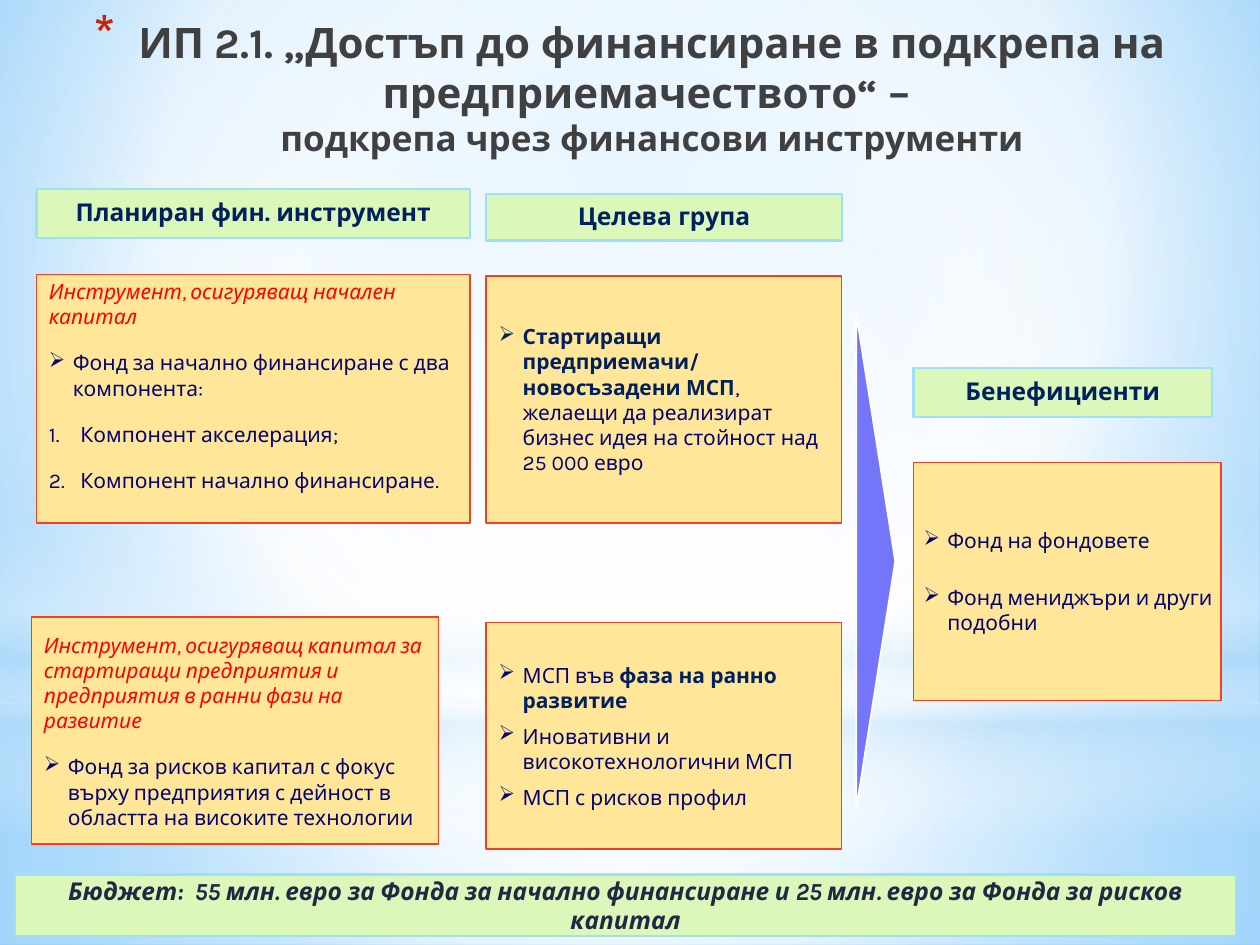
from lxml.etree import SubElement
from pptx import Presentation
from pptx.dml.color import RGBColor
from pptx.enum.shapes import MSO_SHAPE
from pptx.enum.text import MSO_ANCHOR, PP_ALIGN
from pptx.oxml.ns import qn
from pptx.util import Inches, Pt

C = {"white": "FFFFFF", "sky": "B4DCFA", "light": "9ED5FF", "deep": "5BB9FF",
     "green": "DCF7BA", "aqua": "9EE0F8", "sand": "FFE699", "orange": "F14124",
     "violet": "7575FA", "title": "404040", "star": "C3260C", "navy": "002060",
     "ink": "040470", "red": "FF0000", "dark": "212745"}
FONTS = {"title": dict(size=Pt(24), bold=True), "subtitle": dict(size=Pt(20), bold=True),
         "head": dict(size=Pt(14), bold=True), "lead": dict(size=Pt(12), italic=True),
         "body": dict(size=Pt(12)), "strong": dict(size=Pt(12), bold=True),
         "budget": dict(size=Pt(14), bold=True, italic=True)}
INK = {"title": "title", "subtitle": "title", "head": "navy", "lead": "red",
       "body": "ink", "strong": "navy", "budget": "dark"}

prs = Presentation()
prs.slide_width, prs.slide_height = Inches(10), Inches(7.5)
COL, ROW = prs.slide_width / 100, prs.slide_height / 75
s = prs.slides.add_slide(prs.slide_layouts[6])


def gradient(fill, root, stops, focus):
    fill.gradient()
    grad = next(root.iter(qn("a:gradFill")))
    grad.clear()
    grad.set("rotWithShape", "1")
    gs_list = SubElement(grad, qn("a:gsLst"))
    for pos, color, alpha in stops:
        gs = SubElement(gs_list, qn("a:gs"), pos=str(pos * 1000))
        clr = SubElement(gs, qn("a:srgbClr"), val=C[color])
        if alpha < 100:
            SubElement(clr, qn("a:alpha"), val=str(alpha * 1000))
    if focus:
        path = SubElement(grad, qn("a:path"), path="circle")
        SubElement(path, qn("a:fillToRect"), {k: str(v * 1000) for k, v in zip("ltrb", focus)})
    else:
        SubElement(grad, qn("a:lin"), ang="5400000", scaled="0")


def write(sp, paras, margins, **fmt):
    tf = sp.text_frame
    tf.word_wrap = True
    tf.vertical_anchor = fmt.pop("anchor", MSO_ANCHOR.MIDDLE)
    for side, value in zip(("left", "top", "right", "bottom"), margins):
        setattr(tf, f"margin_{side}", Inches(value))
    for i, (bullet, runs) in enumerate(paras):
        p = tf.paragraphs[0] if i == 0 else tf.add_paragraph()
        for key, value in {"alignment": PP_ALIGN.LEFT, **fmt}.items():
            setattr(p, key, value)
        if i == 0 and tf.vertical_anchor == MSO_ANCHOR.TOP:
            p.space_before = Pt(0)
        if bullet:
            pPr = p._p.get_or_add_pPr()
            indent = Inches({"*": 0.35, "1.": 0.25}.get(bullet, 0.19))
            pPr.set("marL", str(indent))
            pPr.set("indent", str(-indent))
            if bullet == "*":
                SubElement(SubElement(pPr, qn("a:buClr")), qn("a:srgbClr"), val=C["star"])
                SubElement(pPr, qn("a:buSzPct"), val="128000")
            if bullet == "1.":
                SubElement(pPr, qn("a:buAutoNum"), type="arabicPeriod")
            else:
                SubElement(pPr, qn("a:buChar"), char=bullet)
        for style, text in runs:
            if style == "subtitle":
                p.add_line_break()
            r = p.add_run()
            r.text = text
            r.font.name = "Karla"
            r.font.color.rgb = RGBColor.from_string(C[INK[style]])
            for key, value in FONTS[style].items():
                setattr(r.font, key, value)


gradient(s.background.fill, s._element,
         [(0, "light", 100), (60, "white", 100), (100, "deep", 100)], (20, 10, 20, 60))

CENTRE = (50, 50, 50, 50)
glows = [
    (MSO_SHAPE.RECTANGLE, 55.8, 19.2, CENTRE,
     [(0, "white", 91), (37, "white", 76), (100, "sky", 79)]),
    (MSO_SHAPE.RECTANGLE, 0, 55.8, CENTRE,
     [(0, "white", 89), (48, "white", 62), (100, "sky", 79)]),
    (MSO_SHAPE.RECTANGLE, 41.2, 25, None,
     [(0, "white", 0), (29, "white", 30), (45, "sky", 40),
      (55, "white", 26), (65, "sky", 60), (100, "white", 0)]),
    (MSO_SHAPE.OVAL, 17.5, 55.8, CENTRE, [(0, "white", 100), (56, "white", 0)]),
]
for shape, top, height, focus, stops in glows:
    sp = s.shapes.add_shape(shape, 0, int(top * ROW), prs.slide_width, int(height * ROW))
    sp.shadow.inherit = False
    sp.line.fill.background()
    gradient(sp.fill, sp._element, stops, focus)

PAD = (0.1, 0.05, 0.1, 0.05)
TIGHT = (0.1, 0.05, 0.04, 0.05)
title = s.shapes.add_textbox(0, 0, prs.slide_width, int(13.9 * ROW))
write(title, [("*", [("title", "ИП 2.1. „Достъп до финансиране в подкрепа на предприемачеството“ – "),
                     ("subtitle", "подкрепа чрез финансови инструменти")])],
      PAD, alignment=PP_ALIGN.CENTER)

HEAD = dict(alignment=PP_ALIGN.CENTER, line_spacing=0.9)
SPACED = dict(space_before=Pt(6), space_after=Pt(6))
LIST = dict(space_after=Pt(6))
LEFT, MID, RIGHT = 2.9, 38.6, 72.5
boxes = [
    (LEFT, 15, 34.4, 3.9, "green", PAD, HEAD, [("", [("head", "Планиран фин. инструмент")])]),
    (MID, 15.4, 28.2, 3.7, "green", PAD, HEAD, [("", [("head", "Целева група")])]),
    (RIGHT, 29.2, 23.7, 3.9, "green", PAD, HEAD, [("", [("head", "Бенефициенти")])]),
    (LEFT, 21.8, 34.4, 19.7, "sand", (0.1, 0.03, 0.04, 0.05),
     dict(SPACED, anchor=MSO_ANCHOR.TOP),
     [("", [("lead", "Инструмент, осигуряващ начален капитал")]),
      ("➢", [("body", "Фонд за начално финансиране с два компонента:")]),
      ("1.", [("body", "Компонент акселерация;")]),
      ("1.", [("body", "Компонент начално финансиране.")])]),
    (MID, 21.9, 28.2, 19.6, "sand", TIGHT, LIST,
     [("➢", [("strong", "Стартиращи предприемачи/ новосъзадени МСП"),
             ("body", ", желаещи да реализират бизнес идея на стойност над 25 000 евро")])]),
    (RIGHT, 36.7, 24.4, 18.9, "sand", (0.08, 0.05, 0, 0.05), dict(space_after=Pt(18)),
     [("➢", [("body", "Фонд на фондовете")]),
      ("➢", [("body", "Фонд мениджъри и други подобни")])]),
    (2.5, 49, 32.3, 18, "sand", TIGHT, SPACED,
     [("", [("lead", "Инструмент, осигуряващ капитал за стартиращи предприятия "
                     "и предприятия в ранни фази на развитие")]),
      ("➢", [("body", "Фонд за рисков капитал с фокус върху предприятия с дейност "
                      "в областта на високите технологии")])]),
    (MID, 49.4, 28.2, 18, "sand", TIGHT, LIST,
     [("➢", [("body", "МСП във "), ("strong", "фаза на ранно развитие")]),
      ("➢", [("body", "Иновативни и високотехнологични МСП")]),
      ("➢", [("body", "МСП с рисков профил")])]),
    (1.2, 69.4, 96.9, 4.9, "green", PAD, dict(alignment=PP_ALIGN.CENTER, space_before=Pt(6)),
     [("", [("budget", "Бюджет:  55 млн. евро за Фонда за начално финансиране "
                       "и 25 млн. евро за Фонда за рисков капитал")])]),
]
EDGE = {"green": ("aqua", 1.25), "sand": ("orange", 1), "violet": ("white", 1)}
shapes = [(MSO_SHAPE.RECTANGLE, *box) for box in boxes]
shapes.append((MSO_SHAPE.ISOSCELES_TRIANGLE, 49.8, 43, 39.4, 3.1, "violet", PAD, {}, []))
for shape, x, y, w, h, color, margins, fmt, paras in shapes:
    sp = s.shapes.add_shape(shape, int(x * COL), int(y * ROW), int(w * COL), int(h * ROW))
    sp.shadow.inherit = False
    sp.fill.solid()
    sp.fill.fore_color.rgb = RGBColor.from_string(C[color])
    edge, width = EDGE[color]
    sp.line.color.rgb = RGBColor.from_string(C[edge])
    sp.line.width = Pt(width)
    sp.rotation = 90 if color == "violet" else 0
    write(sp, paras, margins, **fmt)

prs.save("out.pptx")
